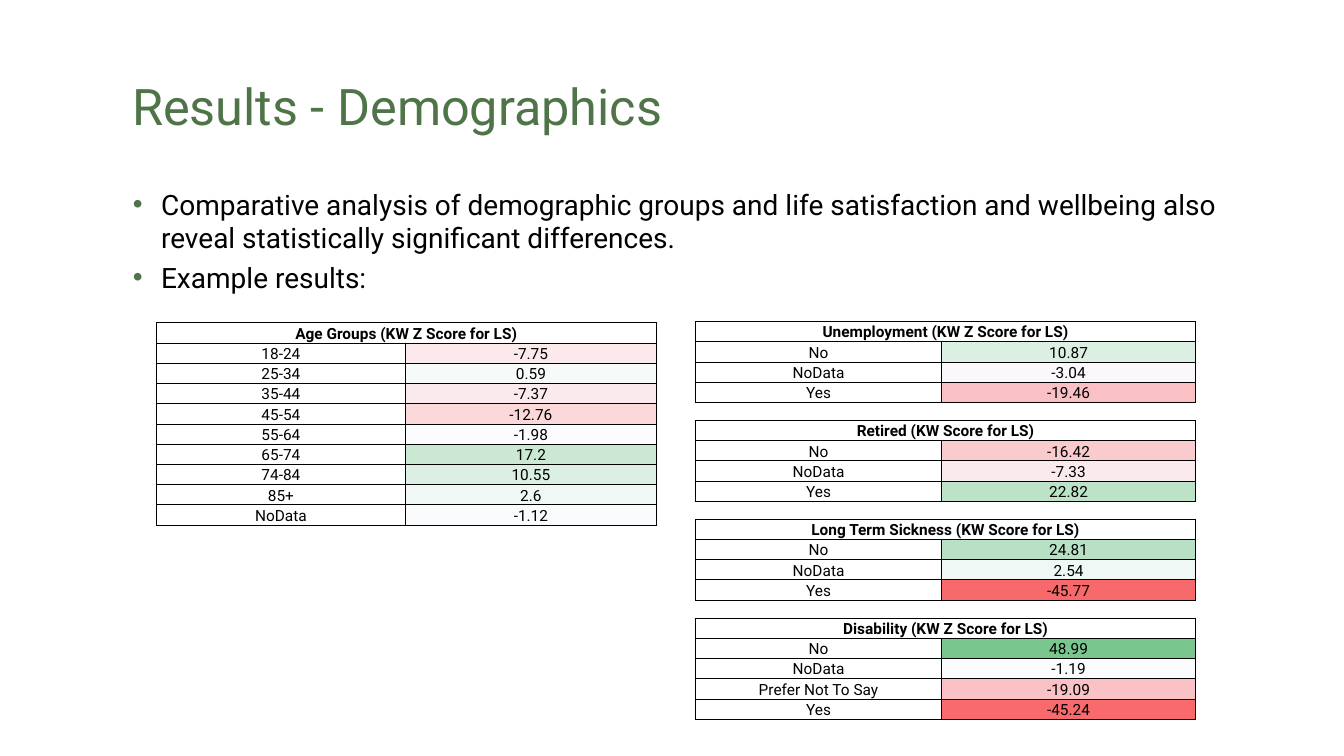
from lxml.etree import SubElement
from pptx import Presentation
from pptx.dml.color import RGBColor
from pptx.enum.text import MSO_ANCHOR, PP_ALIGN
from pptx.oxml.ns import qn
from pptx.util import Cm, Pt


def tint(code):
    """Return the colour for a hex string."""
    return RGBColor.from_string(code)


class Page:
    """Hold the style and the current slide."""

    face, ink, green, white = "Roboto", "000000", "4E7448", "FFFFFF"

    def __init__(self, slide):
        """Keep the slide to draw on."""
        self.slide = slide

    def run(self, para, text, size, color, bold=False):
        """Add one styled run to a paragraph."""
        run = para.add_run()
        run.text = text
        font = run.font
        font.name, font.size, font.bold = self.face, Pt(size), bold
        font.color.rgb = tint(color)

    def frame(self, shape):
        """Give a text shape no margins, wrapping and top anchoring."""
        frame = shape.text_frame
        frame.margin_left = frame.margin_right = 0
        frame.margin_top = frame.margin_bottom = 0
        frame.word_wrap = True
        frame.vertical_anchor = MSO_ANCHOR.TOP
        return frame

    def title(self, text, left, top, width, height):
        """Place and fill the title."""
        shape = self.slide.shapes.title
        shape.left, shape.top = Cm(left), Cm(top)
        shape.width, shape.height = Cm(width), Cm(height)
        para = self.frame(shape).paragraphs[0]
        para.alignment = PP_ALIGN.LEFT
        self.run(para, text, 36, self.green)

    def bullets(self, items, left, top, width, height):
        """Add a bulleted text box."""
        box = self.slide.shapes.add_textbox(Cm(left), Cm(top), Cm(width), Cm(height))
        frame = self.frame(box)
        for i, text in enumerate(items):
            para = frame.add_paragraph() if i else frame.paragraphs[0]
            props = para._p.get_or_add_pPr()
            props.set("marL", str(Cm(0.73)))
            props.set("indent", str(Cm(-0.71)))
            color = SubElement(props, qn("a:buClr"))
            SubElement(color, qn("a:srgbClr"), val=self.green)
            SubElement(props, qn("a:buFont"), typeface="Arial")
            SubElement(props, qn("a:buChar"), char="•")
            if i:
                para.space_before = Pt(4)
            self.run(para, text, 20, self.ink)

    def cell(self, cell, text, fill, bold=False):
        """Fill, border and label one table cell."""
        cell.margin_left = cell.margin_right = cell.margin_top = Cm(0.02)
        cell.margin_bottom = 0
        cell.vertical_anchor = MSO_ANCHOR.BOTTOM
        props = cell._tc.get_or_add_tcPr()
        for side in ("lnL", "lnR", "lnT", "lnB"):
            line = SubElement(props, qn(f"a:{side}"), w=str(Pt(0.5)))
            solid = SubElement(line, qn("a:solidFill"))
            SubElement(solid, qn("a:srgbClr"), val=self.ink)
        cell.fill.solid()
        cell.fill.fore_color.rgb = tint(fill)
        if text:
            para = cell.text_frame.paragraphs[0]
            para.alignment = PP_ALIGN.CENTER
            self.run(para, text, 11, self.ink, bold)

    def table(self, head, rows, left, top, widths, step=0.51):
        """Add a score table under a merged heading."""
        count = len(rows) + 1
        grid = self.slide.shapes.add_table(
            count, 2, Cm(left), Cm(top), Cm(sum(widths)), Cm(step * count)
        ).table
        grid.first_row = grid.horz_banding = False
        for col, width in zip(grid.columns, widths):
            col.width = Cm(width)
        for row in grid.rows:
            row.height = Cm(step)
        self.cell(grid.cell(0, 0), head, self.white, True)
        self.cell(grid.cell(0, 1), "", self.white)
        grid.cell(0, 0).merge(grid.cell(0, 1))
        for i, (label, score, fill) in enumerate(rows, 1):
            self.cell(grid.cell(i, 0), label, self.white)
            self.cell(grid.cell(i, 1), score, fill)


AGES = [
    ("18-24", "-7.75", "FBE9EB"),
    ("25-34", "0.59", "F6FAF9"),
    ("35-44", "-7.37", "FBEAED"),
    ("45-54", "-12.76", "FBD8DA"),
    ("55-64", "-1.98", "FCFCFF"),
    ("65-74", "17.2", "CBE8D4"),
    ("74-84", "10.55", "DCEFE3"),
    ("85+", "2.6", "F0F8F5"),
    ("NoData", "-1.12", "FAFBFD"),
]
GROUPS = {
    "Unemployment (KW Z Score for LS)": [
        ("No", "10.87", "DBEFE3"),
        ("NoData", "-3.04", "FBF8FB"),
        ("Yes", "-19.46", "FAC1C4"),
    ],
    "Retired (KW Score for LS)": [
        ("No", "-16.42", "FACBCE"),
        ("NoData", "-7.33", "FBEAED"),
        ("Yes", "22.82", "BCE2C8"),
    ],
    "Long Term Sickness (KW Score for LS)": [
        ("No", "24.81", "B7E0C4"),
        ("NoData", "2.54", "F0F8F5"),
        ("Yes", "-45.77", "F8696B"),
    ],
    "Disability (KW Z Score for LS)": [
        ("No", "48.99", "79C78E"),
        ("NoData", "-1.19", "FAFCFD"),
        ("Prefer Not To Say", "-19.09", "FAC2C5"),
        ("Yes", "-45.24", "F86A6C"),
    ],
}
POINTS = [
    "Comparative analysis of demographic groups and life satisfaction and "
    "wellbeing also reveal statistically significant differences.",
    "Example results:",
]


def main():
    """Build and save the slide."""
    deck = Presentation()
    deck.slide_width, deck.slide_height = Cm(33.87), Cm(19.05)
    page = Page(deck.slides.add_slide(deck.slide_layouts[5]))
    page.title("Results - Demographics", 3.33, 1.9, 27.61, 2.82)
    page.bullets(POINTS, 3.33, 4.72, 27.61, 12.8)
    page.table("Age Groups (KW Z Score for LS)", AGES, 3.94, 8.13, (6.28, 6.32))
    for i, (head, rows) in enumerate(GROUPS.items()):
        page.table(head, rows, 17.53, 8.1 + 2.49 * i, (6.2, 6.4))
    deck.save("out.pptx")


if __name__ == "__main__":
    main()
